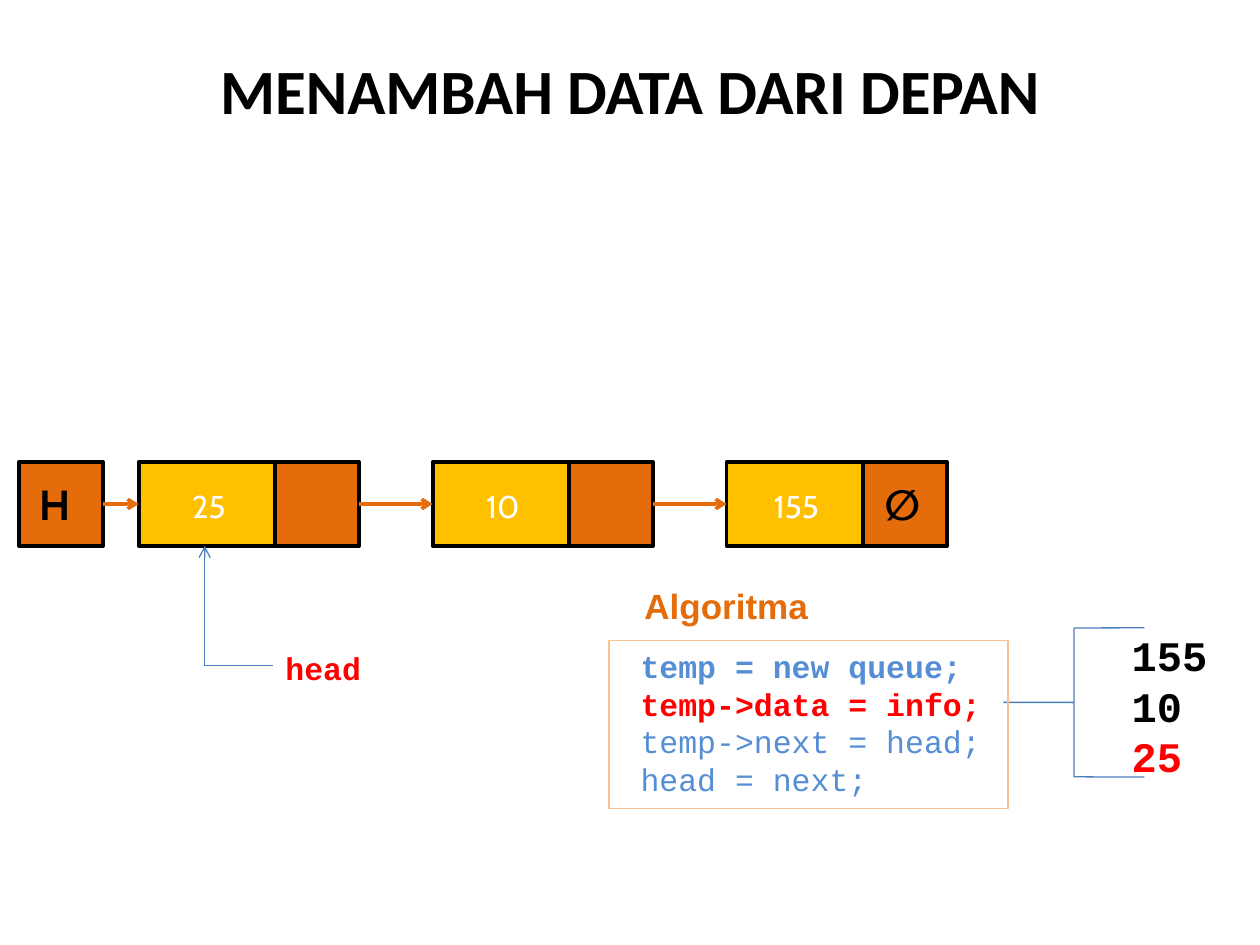
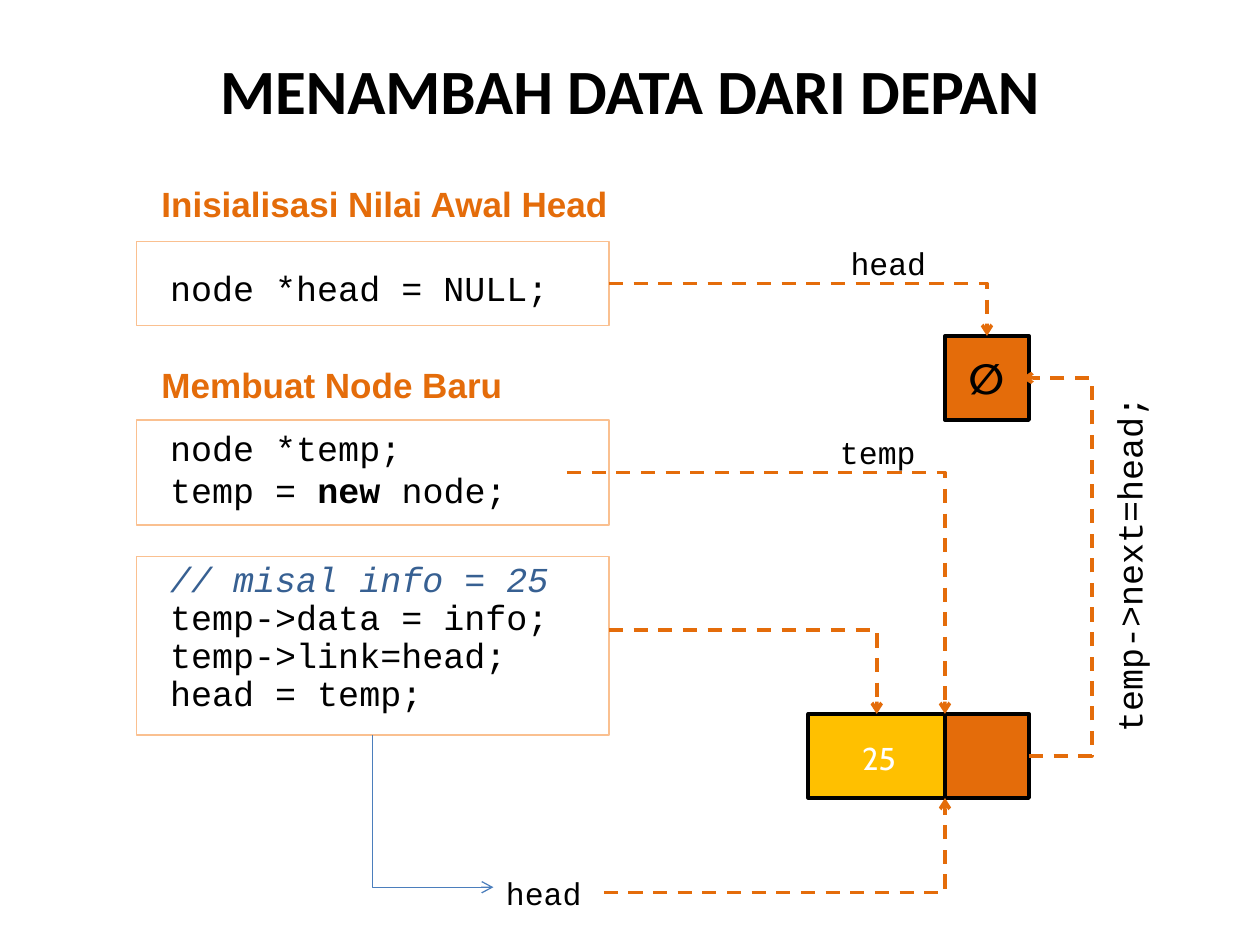
from dataclasses import dataclass

from lxml import etree
from pptx import Presentation
from pptx.dml.color import RGBColor
from pptx.enum.dml import MSO_LINE
from pptx.enum.shapes import MSO_CONNECTOR, MSO_SHAPE
from pptx.enum.text import MSO_ANCHOR, PP_ALIGN
from pptx.oxml.ns import qn
from pptx.util import Emu, Pt

PX = 7620  # EMU per px, 120 px to the inch
RECT, BRACE = MSO_SHAPE.RECTANGLE, MSO_SHAPE.LEFT_BRACE
STRAIGHT, ELBOW = MSO_CONNECTOR.STRAIGHT, MSO_CONNECTOR.ELBOW
DASH = MSO_LINE.DASH
LEFT, CENTER = PP_ALIGN.LEFT, PP_ALIGN.CENTER
TOP, MIDDLE = MSO_ANCHOR.TOP, MSO_ANCHOR.MIDDLE
SIDE_LEFT, SIDE_RIGHT = 1, 3

COLORS = {
    "black": "000000", "white": "FFFFFF", "red": "FF0000",
    "orange": "E46C0A", "peach": "FAC090", "yellow": "FFC000",
    "blue": "4B7EBC", "code": "558ED5", "comment": "376092",
}
HEADING, BODY, CODE, NODE = "Calibri", "Arial", "Courier New", "Cabin"
TITLE = "MENAMBAH DATA DARI DEPAN"
CELL, DATA_W = 80, 130
PAD_X, PAD_Y = 12, 6


@dataclass(frozen=True)
class Box:
    x: int
    y: int
    w: int
    h: int


@dataclass(frozen=True)
class Run:
    text: str
    color: str = "black"
    bold: bool = False
    italic: bool = False


@dataclass(frozen=True)
class Style:
    font: str
    size: int
    align: int = LEFT
    anchor: int = TOP
    spacing: float = 1.0
    indent: int = 0
    drop: int = 0
    wrap: bool = True


@dataclass(frozen=True)
class Elbow:
    start: tuple[int, int]
    end: tuple[int, int]
    color: str = "orange"
    arrow: str = "tailEnd"
    via_x: int | None = None


@dataclass(frozen=True)
class CodeBox:
    box: Box
    style: Style
    lines: list[list[Run]]


def px(n: int) -> Emu:
    return Emu(n * PX)


def place(box: Box) -> tuple[Emu, ...]:
    return px(box.x), px(box.y), px(box.w), px(box.h)


def rgb(name: str) -> RGBColor:
    return RGBColor.from_string(COLORS[name])


def write(shape, lines: list[list[Run]], style: Style) -> None:
    tf = shape.text_frame
    tf.word_wrap = style.wrap
    tf.vertical_anchor = style.anchor
    tf.margin_left = px(PAD_X + style.indent)
    tf.margin_right = px(PAD_X)
    tf.margin_top = px(PAD_Y + style.drop)
    tf.margin_bottom = px(PAD_Y)
    for i, line in enumerate(lines):
        p = tf.add_paragraph() if i else tf.paragraphs[0]
        p.alignment = style.align
        p.line_spacing = style.spacing
        for part in line:
            r = p.add_run()
            r.text = part.text
            r.font.name, r.font.size = style.font, Pt(style.size)
            r.font.bold, r.font.italic = part.bold, part.italic
            r.font.color.rgb = rgb(part.color)


def add_text(s, box: Box, lines: list[list[Run]], style: Style):
    sp = s.shapes.add_textbox(*place(box))
    write(sp, lines, style)
    return sp


def add_rect(parent, box: Box, fill: str | None, line: str | None,
             width: float = 0.75, kind: int = RECT):
    sp = parent.shapes.add_shape(kind, *place(box))
    sp.shadow.inherit = False
    if fill:
        sp.fill.solid()
        sp.fill.fore_color.rgb = rgb(fill)
    else:
        sp.fill.background()
    if line:
        sp.line.color.rgb = rgb(line)
        sp.line.width = Pt(width)
    else:
        sp.line.fill.background()
    return sp


def add_cell(s, x: int, y: int):
    return add_rect(s, Box(x, y, CELL, CELL), "orange", "black", 2.25)


def add_node(s, x: int, y: int, value: str):
    """Draw a list node; return its data cell and its link cell."""
    link = add_cell(s, x + DATA_W, y)
    group = s.shapes.add_group_shape()
    data = add_rect(group, Box(x, y, DATA_W, CELL), "yellow", "black", 2.25)
    w = 24 + 17 * len(value)
    label = add_rect(group, Box(x + (DATA_W - w) // 2 + 2, y + 18, w, 48),
                     "yellow", None)
    write(label, [[Run(value, "white")]],
          Style(NODE, 18, CENTER, wrap=False))
    return data, link


def add_symbol(s, x: int, y: int, text: str) -> None:
    add_text(s, Box(x, y, 67, 60), [[Run(text, bold=True)]],
             Style(NODE, 24, CENTER))


def style_line(c, color: str, width: float, arrow: str, dashed: bool) -> None:
    c.line.color.rgb = rgb(color)
    c.line.width = Pt(width)
    if dashed:
        c.line.dash_style = DASH
    ln = c.line._get_or_add_ln()
    etree.SubElement(ln, qn("a:" + arrow), type="arrow")
    etree.SubElement(c._element.spPr, qn("a:effectLst"))


def link_cells(s, source, target) -> None:
    c = s.shapes.add_connector(STRAIGHT, 0, 0, 0, 0)
    c.begin_connect(source, SIDE_RIGHT)
    c.end_connect(target, SIDE_LEFT)
    style_line(c, "orange", 2, "tailEnd", False)


def add_elbow(s, e: Elbow) -> None:
    """Leave horizontally; turn once, or twice when via_x is given."""
    c = s.shapes.add_connector(ELBOW, *map(px, e.start + e.end))
    geom = c._element.spPr.find(qn("a:prstGeom"))
    if e.via_x is None:
        geom.set("prst", "bentConnector2")
    else:
        turn = (e.via_x - e.start[0]) / (e.end[0] - e.start[0])
        guides = geom.find(qn("a:avLst"))
        etree.SubElement(guides, qn("a:gd"), name="adj1",
                         fmla=f"val {round(turn * 100000)}")
    dashed = e.color == "orange"
    style_line(c, e.color, 2 if dashed else 0.75, e.arrow, dashed)


def add_code(s, code: CodeBox) -> None:
    write(add_rect(s, code.box, None, "peach"), code.lines, code.style)


def add_heading(s, x: int, y: int, text: str) -> None:
    add_text(s, Box(x, y, 458, 60), [[Run(text, "orange", True)]],
             Style(BODY, 20))


def add_slide(prs):
    s = prs.slides.add_slide(prs.slide_layouts[6])
    add_text(s, Box(60, 10, 1080, 150), [[Run(TITLE, bold=True)]],
             Style(HEADING, 36, CENTER, MIDDLE))
    return s


def build_list_slide(prs) -> None:
    s = add_slide(prs)
    row_y = 440
    head = add_cell(s, 18, row_y)
    add_symbol(s, 19, row_y + 10, "H")
    previous = head
    for i, value in enumerate(("25", "10", "155")):
        data, link = add_node(s, 132 + 280 * i, row_y, value)
        link_cells(s, previous, data)
        previous = link
    add_symbol(s, 826, row_y + 10, "∅")

    add_heading(s, 602, 551, "Algoritma")
    brace = add_rect(s, Box(956, 598, 134, 142), None, "blue", kind=BRACE)
    brace.adjustments[0] = 0.002
    add_text(s, Box(1066, 574, 120, 154),
             [[Run("155", bold=True)], [Run("10", bold=True)],
              [Run("25", "red", True)]], Style(CODE, 24, drop=20))
    add_code(s, CodeBox(Box(580, 610, 380, 160), Style(CODE, 18, indent=18), [
        [Run("temp = new queue;", "code", True)],
        [Run("temp->data = info;", "red", True)],
        [Run("temp->next = head;", "code")],
        [Run("head = next;", "code")],
    ]))
    add_elbow(s, Elbow((260, 634), (195, 520), "blue"))
    add_text(s, Box(260, 596, 150, 70), [[Run("head", "red", True)]],
             Style(CODE, 18, drop=16))


def build_new_node_slide(prs) -> None:
    s = add_slide(prs)
    add_heading(s, 142, 168, "Inisialisasi Nilai Awal Head")
    add_heading(s, 142, 340, "Membuat Node Baru")
    code_boxes = (
        CodeBox(Box(130, 230, 450, 80), Style(CODE, 20, indent=20, drop=18),
                [[Run("node *head = NULL;")]]),
        CodeBox(Box(130, 400, 450, 100), Style(CODE, 20, indent=20),
                [[Run("node *temp;")],
                 [Run("temp = "), Run("new", bold=True), Run(" node;")]]),
        CodeBox(Box(130, 530, 450, 170),
                Style(CODE, 20, spacing=0.9, indent=20),
                [[Run("// misal info = 25", "comment", italic=True)],
                 [Run("temp->data = info;")],
                 [Run("temp->link=head;")],
                 [Run("head = temp;")]]),
    )
    for code in code_boxes:
        add_code(s, code)

    add_cell(s, 900, 320)
    add_symbol(s, 906, 330, "∅")
    add_node(s, 770, 680, "25")

    elbows = (
        Elbow((580, 270), (940, 320)),
        Elbow((540, 450), (900, 680)),
        Elbow((580, 600), (835, 680)),
        Elbow((980, 720), (973, 360), via_x=1040),
        Elbow((575, 850), (900, 760)),
        Elbow((470, 845), (355, 700), "blue", "headEnd"),
    )
    for elbow in elbows:
        add_elbow(s, elbow)

    pointer = Style(CODE, 18, indent=18, drop=16)
    add_text(s, Box(780, 210, 140, 80), [[Run("head")]], pointer)
    add_text(s, Box(770, 390, 140, 80), [[Run("temp")]], pointer)
    add_text(s, Box(470, 810, 150, 70), [[Run("head")]],
             Style(CODE, 18, drop=16))
    sp = add_text(s, Box(854, 475, 450, 60), [[Run("temp->next=head;")]],
                  Style(CODE, 20, indent=20))
    sp.rotation = 270


def main() -> None:
    prs = Presentation()
    prs.slide_width, prs.slide_height = px(1200), px(900)
    build_list_slide(prs)
    build_new_node_slide(prs)
    prs.save("out.pptx")


if __name__ == "__main__":
    main()
